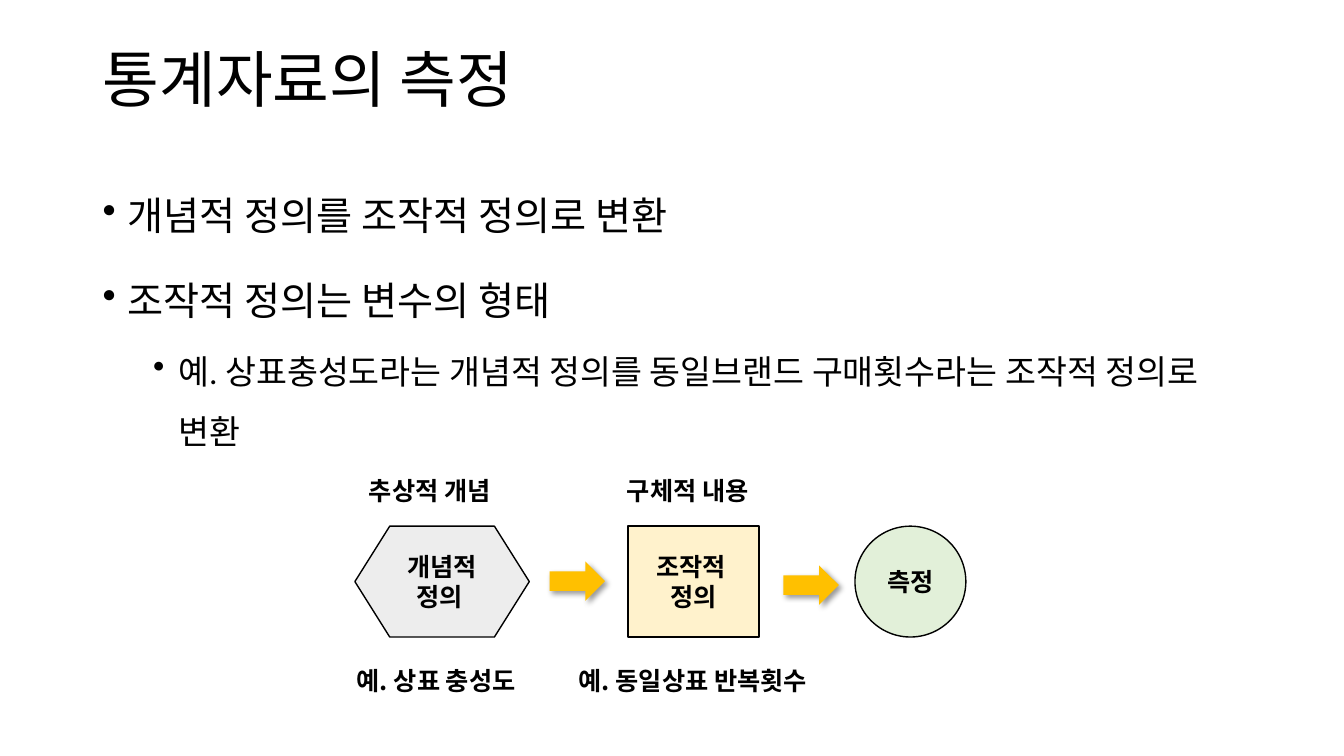
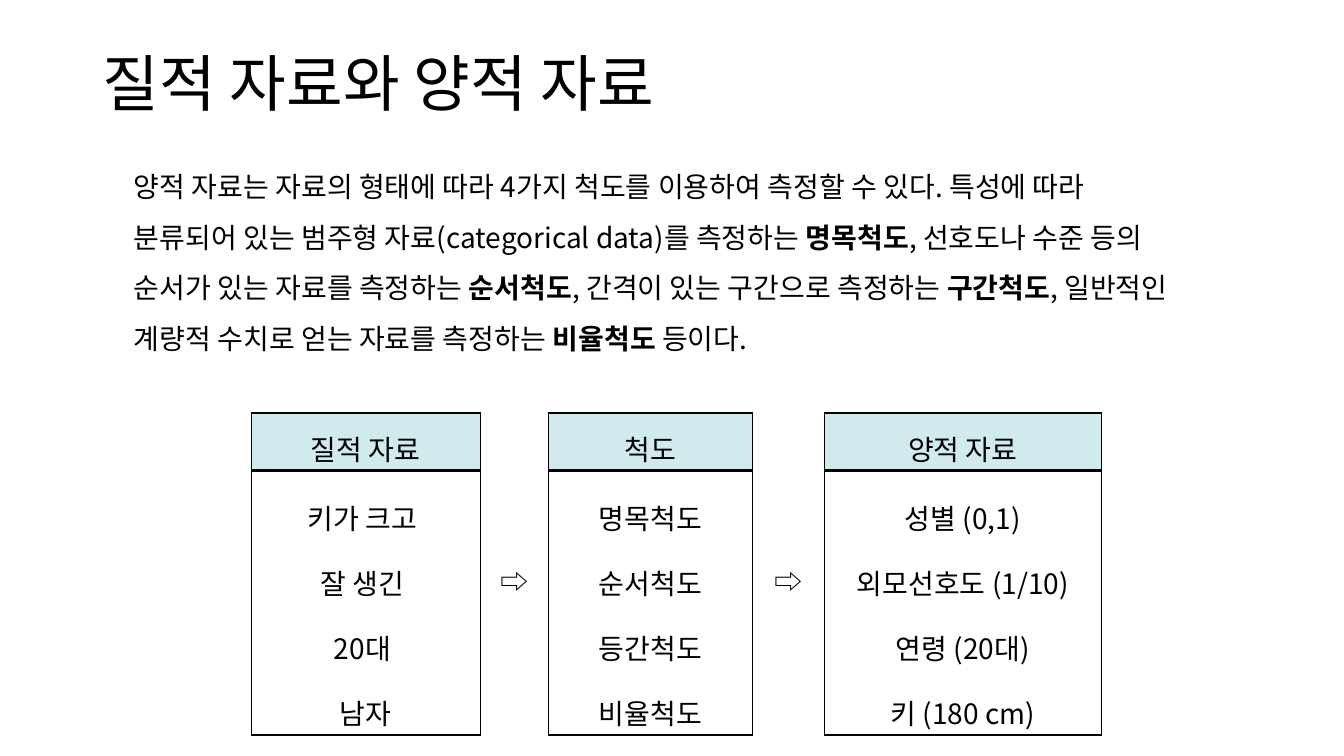
from lxml import etree
from pptx import Presentation
from pptx.dml.color import RGBColor
from pptx.enum.shapes import MSO_SHAPE
from pptx.enum.text import MSO_ANCHOR, PP_ALIGN
from pptx.oxml import parse_xml
from pptx.oxml.ns import nsdecls, qn
from pptx.util import Inches, Pt

BLACK = "000000"
GREY, CREAM, GREEN = "EDEDED", "FFF2CC", "E2F0D9"
AMBER, HEADER_BLUE = "FFC000", "D0EAED"
HEAD_FONT, KOREAN_FONT = "Calibri", "Noto Sans CJK KR"
THIN, MEDIUM, THICK = 0.28, 1.41, 1.98


def rgb(value):
    return RGBColor.from_string(value)


def style(p, size, font=KOREAN_FONT, bold=False, align=None, spacing=None):
    p.font.size, p.font.name, p.font.bold = Pt(size), font, bold
    p.font.color.rgb = rgb(BLACK)
    if align is not None:
        p.alignment = align
    if spacing:
        p.line_spacing = spacing


def fill_lines(tf, lines, **look):
    """Write each line as a paragraph of the same look."""
    for i, line in enumerate(lines):
        p = tf.paragraphs[0] if i == 0 else tf.add_paragraph()
        p.add_run().text = line
        style(p, **look)


def add_text(s, box, lines, wrap=True, anchor=MSO_ANCHOR.TOP, **look):
    tf = s.shapes.add_textbox(*map(Inches, box)).text_frame
    tf.word_wrap, tf.vertical_anchor = wrap, anchor
    fill_lines(tf, lines, **look)
    return tf


def add_title(s, text, width, height):
    add_text(s, (0.92, 0.4, width, height), [text], anchor=MSO_ANCHOR.MIDDLE,
             size=44, font=HEAD_FONT, spacing=0.9)


def add_bullets(s, box, items):
    """Place (level, text) items as a bulleted list."""
    tf = add_text(s, box, [text for _, text in items], size=28,
                  font=HEAD_FONT, spacing=1.5)
    for p, (level, _) in zip(tf.paragraphs, items):
        p.level = level
        p.font.size = Pt(28 - 4 * level)
        p.space_before = Pt(10 - 5 * level)
        pPr = p._p.get_or_add_pPr()
        pPr.set("marL", str(Inches(0.25 + 0.5 * level)))
        pPr.set("indent", str(Inches(-0.25)))
        bullet = parse_xml(f'<a:buChar {nsdecls("a")} char="•"/>')
        pPr.find(qn("a:defRPr")).addprevious(bullet)


def add_node(s, kind, box, lines, color):
    sp = s.shapes.add_shape(kind, *map(Inches, box))
    sp.shadow.inherit = False
    sp.fill.solid()
    sp.fill.fore_color.rgb = rgb(color)
    sp.line.color.rgb = rgb(BLACK)
    sp.line.width = Pt(1)
    sp.text_frame.vertical_anchor = MSO_ANCHOR.MIDDLE
    fill_lines(sp.text_frame, lines, size=18, bold=True,
               align=PP_ALIGN.CENTER)


def add_block_arrow(s, left, top):
    sp = s.shapes.add_shape(MSO_SHAPE.RIGHT_ARROW, Inches(left), Inches(top),
                            Inches(0.55), Inches(0.39))
    sp.fill.solid()
    sp.fill.fore_color.rgb = rgb(AMBER)
    sp.line.fill.background()
    sp.shadow.inherit = False
    effects = sp._element.spPr.find(qn("a:effectLst"))
    effects.append(parse_xml(
        f'<a:outerShdw {nsdecls("a")} blurRad="{Pt(4)}" dist="{Pt(3)}" '
        f'dir="2700000" algn="tl" rotWithShape="0"><a:srgbClr val="{BLACK}">'
        '<a:alpha val="40000"/></a:srgbClr></a:outerShdw>'))


def add_measurement_flow(s, left, top):
    """Draw concept, operational definition and measurement with captions."""
    node_top, size = top + 0.55, 1.1
    nodes = [
        (MSO_SHAPE.FLOWCHART_PREPARATION, 0.08, 1.73, ["개념적 정의 "], GREY),
        (MSO_SHAPE.RECTANGLE, 2.79, 1.3, ["조작적 ", "정의"], CREAM),
        (MSO_SHAPE.OVAL, 5.04, size, ["측정"], GREEN),
    ]
    for kind, dx, width, lines, color in nodes:
        add_node(s, kind, (left + dx, node_top, width, size), lines, color)
    for dx, dy in [(2.01, 0.9), (4.33, 0.94)]:
        add_block_arrow(s, left + dx, top + dy)
    captions = [
        (0.12, 0, 1.65, "추상적 개념", True),
        (2.68, 0, 1.65, "구체적 내용", True),
        (0, 1.88, 1.95, "예. 상표 충성도", False),
        (2.2, 1.88, 2.71, "예. 동일상표 반복횟수", False),
    ]
    for dx, dy, width, text, wrap in captions:
        add_text(s, (left + dx, top + dy, width, 0.4), [text], wrap=wrap,
                 size=18, bold=True)


def add_marked_paragraph(s, box, parts):
    """Place one paragraph in which every second part is bold."""
    tf = add_text(s, box, parts[:1], size=20, spacing=1.5)
    p = tf.paragraphs[0]
    for i, part in enumerate(parts[1:], 1):
        r = p.add_run()
        r.text = part
        r.font.bold = i % 2 == 1


def set_borders(cell, **widths):
    """Draw black borders of the given point widths; other sides get none."""
    tcPr = cell._tc.get_or_add_tcPr()
    for i, side in enumerate(("lnL", "lnR", "lnT", "lnB")):
        width = widths.get(side, 0)
        ln = etree.Element(qn(f"a:{side}"), w=str(Pt(width)))
        if width:
            paint = etree.SubElement(ln, qn("a:solidFill"))
            etree.SubElement(paint, qn("a:srgbClr"), val=BLACK)
        else:
            etree.SubElement(ln, qn("a:noFill"))
        tcPr.insert(i, ln)


def fill_cell(cell, lines, spacing, color=None):
    cell.margin_left = cell.margin_right = Inches(0.07)
    cell.margin_top = cell.margin_bottom = Inches(0.02)
    cell.vertical_anchor = MSO_ANCHOR.MIDDLE
    if color:
        cell.fill.solid()
        cell.fill.fore_color.rgb = rgb(color)
    else:
        cell.fill.background()
    fill_lines(cell.text_frame, lines, size=20, align=PP_ALIGN.CENTER,
               spacing=spacing)


def add_scale_table(s, left, top, groups, col_widths, row_heights):
    """Set (header, items) groups side by side with arrow columns between."""
    box = (left, top, sum(col_widths), sum(row_heights))
    frame = s.shapes.add_table(2, len(col_widths), *map(Inches, box))
    table = frame.table
    table.first_row = table.horz_banding = False
    for col, width in zip(table.columns, col_widths):
        col.width = Inches(width)
    for row, height in zip(table.rows, row_heights):
        row.height = Inches(height)
    for c in range(len(col_widths)):
        header_cell, items_cell = table.cell(0, c), table.cell(1, c)
        if c % 2:
            header_cell.merge(items_cell)
            fill_cell(header_cell, ["⇨"], 1.3)
            for cell in (header_cell, items_cell):
                set_borders(cell, lnL=THIN, lnR=THIN)
            continue
        header, items = groups[c // 2]
        fill_cell(header_cell, [header], 1.3, HEADER_BLUE)
        set_borders(header_cell, lnL=THIN, lnR=THIN, lnT=MEDIUM, lnB=THICK)
        fill_cell(items_cell, items, 1.6)
        set_borders(items_cell, lnL=THIN, lnR=THIN, lnT=THICK, lnB=MEDIUM)


def measurement_slide(s):
    add_title(s, "통계자료의 측정", 5.2, 0.84)
    add_bullets(s, (0.92, 1.62, 11.5, 5.43), [
        (0, "개념적 정의를 조작적 정의로 변환"),
        (0, "조작적 정의는 변수의 형태"),
        (1, "예. 상표충성도라는 개념적 정의를 동일브랜드 구매횟수라는 "
            "조작적 정의로 변환"),
    ])
    add_measurement_flow(s, 3.44, 4.67)


def data_types_slide(s):
    add_title(s, "질적 자료와 양적 자료", 6.12, 0.91)
    add_scale_table(s, 2.49, 4.1, [
        ("질적 자료", ["키가 크고 ", "잘 생긴 ", "20대 ", "남자"]),
        ("척도", ["명목척도", "순서척도", "등간척도", "비율척도"]),
        ("양적 자료", ["성별 (0,1)", "외모선호도 (1/10)", "연령 (20대)",
                   "키 (180 cm)"]),
    ], (2.27, 0.68, 2.02, 0.72, 2.74), (0.57, 2.62))
    add_marked_paragraph(s, (1.23, 1.47, 10.6, 2.12), [
        "양적 자료는 자료의 형태에 따라 4가지 척도를 이용하여 측정할 수 있다. "
        "특성에 따라 분류되어 있는 범주형 자료(categorical data)를 측정하는 ",
        "명목척도", ", 선호도나 수준 등의 순서가 있는 자료를 측정하는 ",
        "순서척도", ", 간격이 있는 구간으로 측정하는 ",
        "구간척도", ", 일반적인 계량적 수치로 얻는 자료를 측정하는 ",
        "비율척도", " 등이다.",
    ])


def main():
    prs = Presentation()
    prs.slide_width, prs.slide_height = Inches(13.33), Inches(7.5)
    for build in (measurement_slide, data_types_slide):
        build(prs.slides.add_slide(prs.slide_layouts[6]))
    prs.save("out.pptx")


if __name__ == "__main__":
    main()
